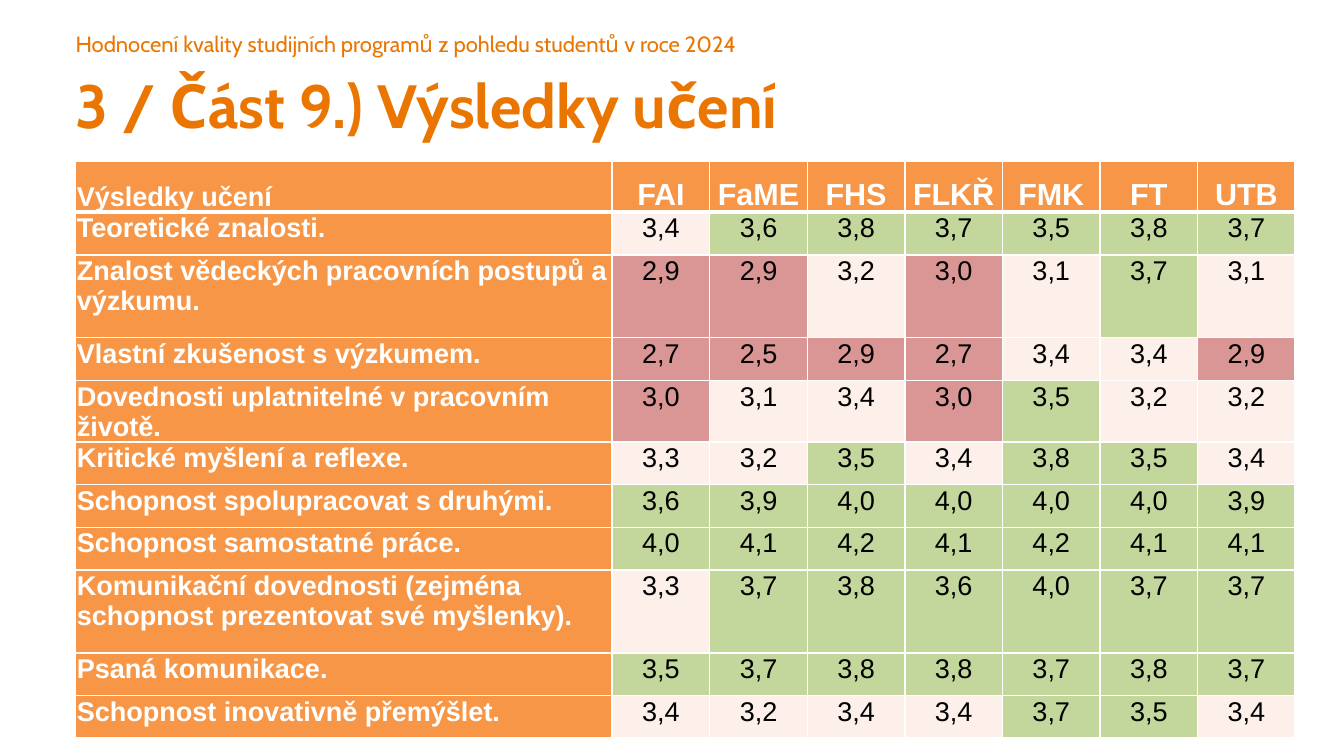
from lxml import etree
from pptx import Presentation, util as u
from pptx.dml.color import RGBColor
from pptx.enum import text as t
from pptx.oxml import ns

WHITE = RGBColor(0xFF, 0xFF, 0xFF)
BLACK = RGBColor(0, 0, 0)
BRAND = RGBColor(0xEA, 0x75, 0x00)
HEAD = RGBColor(0xF7, 0x96, 0x46)
GOOD = RGBColor(0xC3, 0xD6, 0x9B)
FAIR = RGBColor(0xFD, 0xEF, 0xE9)
WEAK = RGBColor(0xD9, 0x96, 0x94)

UNITS = "Výsledky učení|FAI|FaME|FHS|FLKŘ|FMK|FT|UTB".split("|")
SCORES = [
    ("Teoretické znalosti.", "3,4 3,6 3,8 3,7 3,5 3,8 3,7"),
    ("Znalost vědeckých pracovních postupů a výzkumu.", "2,9 2,9 3,2 3,0 3,1 3,7 3,1"),
    ("Vlastní zkušenost s výzkumem.", "2,7 2,5 2,9 2,7 3,4 3,4 2,9"),
    ("Dovednosti uplatnitelné v pracovním životě.", "3,0 3,1 3,4 3,0 3,5 3,2 3,2"),
    ("Kritické myšlení a reflexe.", "3,3 3,2 3,5 3,4 3,8 3,5 3,4"),
    ("Schopnost spolupracovat s druhými.", "3,6 3,9 4,0 4,0 4,0 4,0 3,9"),
    ("Schopnost samostatné práce.", "4,0 4,1 4,2 4,1 4,2 4,1 4,1"),
    ("Komunikační dovednosti (zejména schopnost prezentovat své myšlenky).",
     "3,3 3,7 3,8 3,6 4,0 3,7 3,7"),
    ("Psaná komunikace.", "3,5 3,7 3,8 3,8 3,7 3,8 3,7"),
    ("Schopnost inovativně přemýšlet.", "3,4 3,2 3,4 3,4 3,7 3,5 3,4"),
]
TALL = (2, 8)


def style(para, size, face, color, bold):
    font = para.font
    font.size, font.name, font.bold = u.Pt(size), face, bold
    font.color.rgb = color


def label(shape, box, words, size, bold):
    shape.left, shape.top, shape.width, shape.height = map(u.Inches, box)
    frame = shape.text_frame
    frame.margin_left = frame.margin_right = 0
    frame.margin_top = frame.margin_bottom = 0
    frame.word_wrap = True
    frame.auto_size = t.MSO_AUTO_SIZE.NONE
    frame.vertical_anchor = t.MSO_ANCHOR.TOP
    frame.text = words
    para = frame.paragraphs[0]
    para.alignment = t.PP_ALIGN.LEFT
    style(para, size, "Cabin", BRAND, bold)


def header(slide, box):
    left, top, width, height = box
    small = slide.shapes.add_textbox(0, 0, 0, 0)
    label(small, (left, top, width, 0.22),
          "Hodnocení kvality studijních programů z pohledu studentů v roce 2024", 13, False)
    label(slide.shapes.title, (left, top + 0.3, width, height - 0.3),
          "3 / Část 9.) Výsledky učení", 36, True)


def border(cell, row):
    heavy = {0: "lnB", 1: "lnT"}.get(row)
    props = cell._tc.get_or_add_tcPr()
    for side in ("lnL", "lnR", "lnT", "lnB"):
        width = 3 if side == heavy else 1
        line = etree.SubElement(props, ns.qn("a:" + side), w=str(u.Pt(width)))
        fill = etree.SubElement(line, ns.qn("a:solidFill"))
        etree.SubElement(fill, ns.qn("a:srgbClr"), val=str(WHITE))


def shade(score):
    value = float(score.replace(",", "."))
    return GOOD if value >= 3.5 else FAIR if value > 3 else WEAK


def fill_cell(cell, row, col, words):
    border(cell, row)
    title = row == 0 or col == 0
    unit = row == 0 and col > 0
    cell.fill.solid()
    cell.fill.fore_color.rgb = HEAD if title else shade(words)
    cell.margin_left = cell.margin_right = u.Inches(0.05 if unit else 0.01)
    cell.margin_top = u.Inches(0 if unit else 0.01)
    cell.margin_bottom = 0
    cell.vertical_anchor = t.MSO_ANCHOR.TOP if row else t.MSO_ANCHOR.BOTTOM
    cell.text = words
    para = cell.text_frame.paragraphs[0]
    style(para, 18 if unit else 16, "Arial", WHITE if title else BLACK, title)
    if col:
        para.alignment = t.PP_ALIGN.CENTER
    if unit:
        para.line_spacing = 1.5
    elif col:
        para.space_after = u.Pt(6)


def score_table(slide, box):
    rows = [UNITS] + [[name] + marks.split() for name, marks in SCORES]
    frame = slide.shapes.add_table(len(rows), len(UNITS), *map(u.Inches, box))
    table = frame.table
    for col, part in enumerate(table.columns):
        part.width = u.Inches(0.8 if col else box[2] - 0.8 * (len(UNITS) - 1))
    for row, words in enumerate(rows):
        table.rows[row].height = u.Inches(0.42 if row == 0 else 0.68 if row in TALL else 0.35)
        for col, word in enumerate(words):
            fill_cell(table.cell(row, col), row, col, word)


def main():
    deck = Presentation()
    deck.slide_width, deck.slide_height = u.Inches(11.02), u.Inches(6.2)
    slide = deck.slides.add_slide(deck.slide_layouts[5])
    header(slide, (0.62, 0.25, 9.92, 0.95))
    score_table(slide, (0.62, 1.32, 10, 4.58))
    deck.save("out.pptx")


if __name__ == "__main__":
    main()
